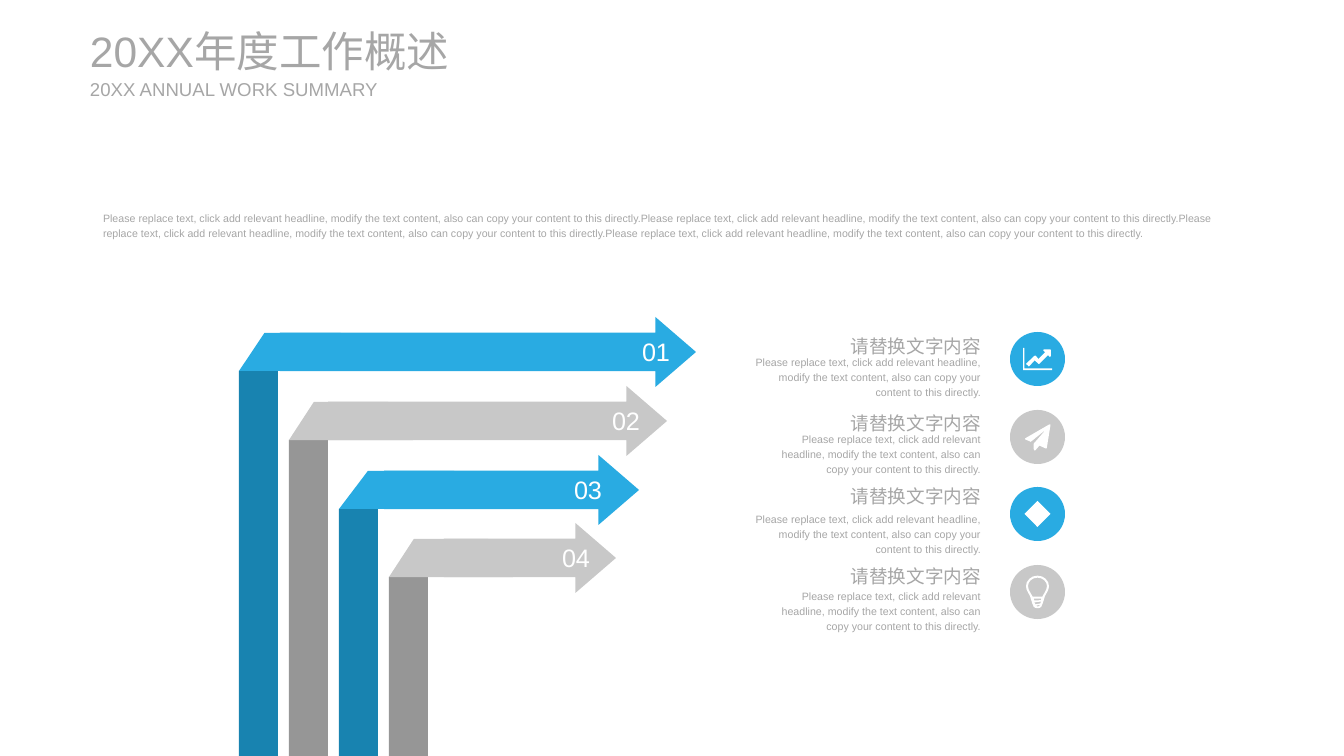
from pptx import Presentation
from pptx import util as u
from pptx.dml.color import RGBColor
from pptx.enum import shapes, text

PX = 9565  # EMU per px
COLORS = {"blue": "29ABE2", "dark blue": "1883B0", "silver": "C8C8C8",
          "dark grey": "969696", "text": "A6A6A6", "white": "FFFFFF"}
FONT = "Arial"

# Content
TITLE = "20XX年度工作概述"
SUBTITLE = "20XX ANNUAL WORK SUMMARY"
SENTENCE = ("Please replace text, click add relevant headline, modify the text "
            "content, also can copy your content to this directly.")
HEADING = "请替换文字内容"

# number, face, side, pillar left, fold width, arrow left, arrow right, top, number centre
RIBBONS = [
    ("01", "blue", "dark blue", 239, 127, 280, 696, 317, 656),
    ("02", "silver", "dark grey", 289, 124, 328, 667, 386, 626),
    ("03", "blue", "dark blue", 339, 144, 384, 639, 455, 588),
    ("04", "silver", "dark grey", 389, 124, 444, 616, 523, 576),
]


def mirrored(half):
    """Close a half profile around the vertical axis."""
    return half + [(-x, y) for x, y in reversed(half)]


# Icon outlines, in tenths of a px from the badge centre
CHART = [
    [(-145, -110), (-130, -110), (-130, 95), (145, 95), (145, 110), (-145, 110)],
    [(134, -29), (124, -19), (105, -38), (19, 48), (10, 48), (-29, 14), (-86, 76),
     (-115, 48), (-29, -33), (-19, -33), (10, 0), (76, -67), (57, -86), (62, -95),
     (128, -95), (134, -89)],
]
PLANE = [[(130, -120), (92, 115), (82, 115), (19, 86), (-22, 134), (-32, 134),
          (-38, 120), (-38, 67), (86, -76), (-67, 48), (-124, 24), (-124, 14),
          (115, -124), (125, -126)]]
BULB = [
    mirrored([(0, -163), (45, -155), (81, -132), (107, -97), (115, -57), (109, -25),
              (95, 5), (75, 40), (64, 77), (52, 115), (38, 148), (20, 160), (0, 163)]),
    mirrored([(0, -143), (37, -136), (67, -118), (88, -90), (95, -57), (88, -25),
              (70, 10), (57, 32), (48, 48)]),
    [(-38, 67), (38, 67), (36, 82), (-32, 86)],
    [(-32, 105), (36, 96), (28, 115), (-20, 124)],
    [(-17, 138), (28, 128), (16, 142), (0, 146)],
]

# icon (None for a plain diamond), badge colour, heading top, heading line spacing,
# body top, body width
ITEMS = [
    (CHART, "blue", 331, 1.2, 353, 226),
    (PLANE, "silver", 408, 1.2, 430, 224),
    (None, "blue", 485, 1.0, 510, 226),
    (BULB, "silver", 565, 1.0, 587, 224),
]
SLIDE_W, SLIDE_H = 1344, 756
PILLAR_W, ARROW_H, FOLD_H, FOLD_DROP = 39, 70, 38, 16
BADGE_X, BADGE_TOP, BADGE_STEP, BADGE_W, BADGE_H = 1010, 332, 233 / 3, 55, 54
DIAMOND = 26
CAPTION_RIGHT, HEADING_W = 981, 150

prs = Presentation()
prs.slide_width, prs.slide_height = SLIDE_W * PX, SLIDE_H * PX
slide = prs.slides.add_slide(prs.slide_layouts[6])


def paint(shape, color):
    shape.shadow.inherit = False
    shape.fill.solid()
    shape.fill.fore_color.rgb = RGBColor.from_string(COLORS[color])
    shape.line.fill.background()


def add_block(kind, x, y, w, h, color):
    block = slide.shapes.add_shape(kind, *(round(v * PX) for v in (x, y, w, h)))
    paint(block, color)
    return block


def add_icon(outlines, center_x, center_y):
    first, *others = outlines
    pen = slide.shapes.build_freeform(*first[0], scale=PX / 10)
    pen.add_line_segments(first[1:], close=True)
    for outline in others:
        pen.move_to(*outline[0])
        pen.add_line_segments(outline[1:], close=True)
    paint(pen.convert_to_shape(round(center_x * PX), round(center_y * PX)), "white")


def add_text(words, x, y, w, h, size, color="text", align=text.PP_ALIGN.LEFT,
             anchor=text.MSO_ANCHOR.TOP, spacing=1.0):
    frame = slide.shapes.add_textbox(x * PX, y * PX, w * PX, h * PX).text_frame
    frame.word_wrap = True
    frame.vertical_anchor = anchor
    frame.margin_left = frame.margin_right = frame.margin_top = frame.margin_bottom = 0
    paragraph = frame.paragraphs[0]
    paragraph.alignment = align
    paragraph.line_spacing = spacing
    run = paragraph.add_run()
    run.text = words
    run.font.name = FONT
    run.font.size = u.Pt(size)
    run.font.color.rgb = RGBColor.from_string(COLORS[color])


# Folded ribbons: pillar, arrow, fold
SHAPE = shapes.MSO_SHAPE
for _, face, side, left, fold_w, arrow_x, arrow_end, top, _ in RIBBONS:
    fold_y = top + FOLD_DROP
    pillar_y = fold_y + FOLD_H
    add_block(SHAPE.RECTANGLE, left, pillar_y, PILLAR_W, SLIDE_H - pillar_y, side)
    arrow = add_block(SHAPE.RIGHT_ARROW, arrow_x, top, arrow_end - arrow_x, ARROW_H, face)
    arrow.adjustments[0], arrow.adjustments[1] = 0.55, 0.58
    fold = add_block(SHAPE.FLOWCHART_MANUAL_OPERATION, left, fold_y, fold_w, FOLD_H, face)
    fold.rotation = 180

# Introduction
add_text(SENTENCE * 4, 103, 209, 1140, 30, 8, spacing=1.2)

# Ribbon numbers
MIDDLE = text.MSO_ANCHOR.MIDDLE
for number, *_, top, center in RIBBONS:
    add_text(number, center - 24, top + 19, 48, 31, 19, "white",
             text.PP_ALIGN.CENTER, MIDDLE)

# Captions with badges
RIGHT = text.PP_ALIGN.RIGHT
for i, (icon, color, heading_y, spacing, body_y, body_w) in enumerate(ITEMS):
    add_text(HEADING, CAPTION_RIGHT - HEADING_W, heading_y, HEADING_W, 25, 14,
             align=RIGHT, spacing=spacing)
    add_text(SENTENCE, CAPTION_RIGHT - body_w, body_y, body_w, 45, 8,
             align=RIGHT, spacing=1.2)
    badge_y = BADGE_TOP + round(i * BADGE_STEP)
    add_block(SHAPE.OVAL, BADGE_X, badge_y, BADGE_W, BADGE_H, color)
    center_x, center_y = BADGE_X + BADGE_W / 2, badge_y + BADGE_H / 2
    if icon:
        add_icon(icon, center_x, center_y)
    else:
        add_block(SHAPE.DIAMOND, center_x - DIAMOND / 2, center_y - DIAMOND / 2,
                  DIAMOND, DIAMOND, "white")

# Title
add_text(TITLE, 90, 25, 413, 52, 32, anchor=MIDDLE)
add_text(SUBTITLE, 90, 78, 293, 23, 14, anchor=MIDDLE)

prs.save("out.pptx")
